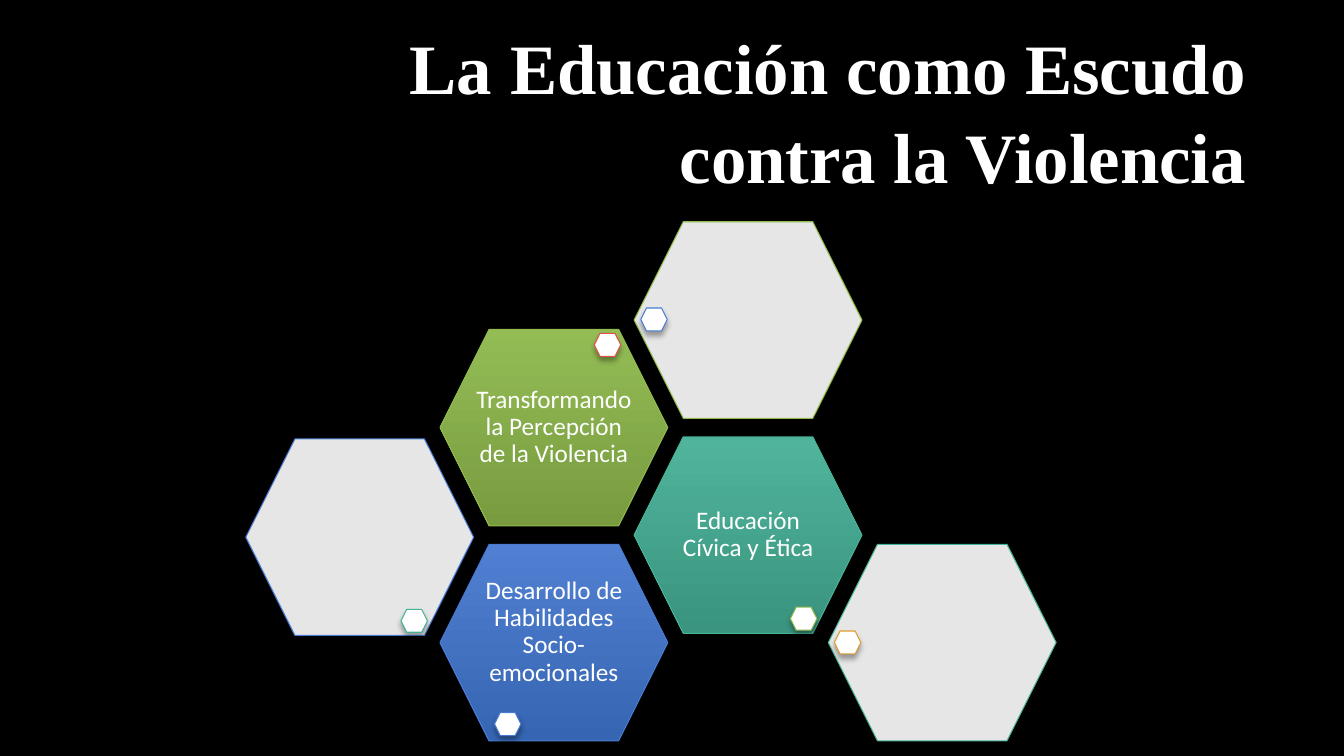
from lxml import etree
from pptx import Presentation
from pptx.dml.color import RGBColor
from pptx.enum.shapes import MSO_SHAPE
from pptx.enum.text import MSO_ANCHOR, MSO_AUTO_SIZE, PP_ALIGN
from pptx.oxml.ns import qn
from pptx.util import Pt

HEX = MSO_SHAPE.HEXAGON
TOP, MIDDLE, BOTTOM = MSO_ANCHOR.TOP, MSO_ANCHOR.MIDDLE, MSO_ANCHOR.BOTTOM
CENTER, RIGHT = PP_ALIGN.CENTER, PP_ALIGN.RIGHT
NO_FIT = MSO_AUTO_SIZE.NONE

BLACK = RGBColor(0x00, 0x00, 0x00)
WHITE = RGBColor(0xFF, 0xFF, 0xFF)
BLUE = RGBColor(0x47, 0x7B, 0xD1)
TEAL = RGBColor(0x46, 0xB2, 0x98)
GREEN = RGBColor(0x90, 0xBA, 0x4C)
RED = RGBColor(0xE2, 0x52, 0x47)
AMBER = RGBColor(0xDD, 0x9D, 0x31)
SHADES = {
    BLUE: (RGBColor(0x51, 0x80, 0xD2), RGBColor(0x36, 0x65, 0xB3)),
    TEAL: (RGBColor(0x50, 0xB4, 0x9B), RGBColor(0x3A, 0x94, 0x7F)),
    GREEN: (RGBColor(0x93, 0xBC, 0x55), RGBColor(0x78, 0x9B, 0x3F)),
}

LEFT, UPPER = 175.6, 158.4
STEP_X, STEP_Y = 138.7, 76.8
CELL = (162.7, 140.4)
DOT = (18.9, 16.4)
LABEL = (112.3, 96.5)

CELLS = [
    (1, 3, BLUE, "Desarrollo de Habilidades Socio-emocionales", TOP, (38.9, 120.2), BLUE),
    (0, 2.02, BLUE, None, None, (110.8, 121.7), TEAL),
    (2, 2, TEAL, "Educación Cívica y Ética", MIDDLE, (111.6, 121.7), GREEN),
    (3, 3, TEAL, None, None, (4.3, 61.9), AMBER),
    (1, 1, GREEN, "Transformando la Percepción de la Violencia", MIDDLE, (110.2, 2.9), RED),
    (2, 0, GREEN, None, None, (4.7, 61.6), BLUE),
]


def write(shape, text, font, size, align, anchor, pad, gap, bold=False):
    frame = shape.text_frame
    frame.word_wrap = True
    frame.auto_size = NO_FIT
    frame.vertical_anchor = anchor
    frame.margin_left = frame.margin_right = Pt(pad[0])
    frame.margin_top = frame.margin_bottom = Pt(pad[1])
    para = frame.paragraphs[0]
    para.alignment = align
    para.line_spacing = gap
    run = para.add_run()
    run.text = text
    run.font.name = font
    run.font.size = Pt(size)
    run.font.bold = bold
    run.font.color.rgb = WHITE


def shade(shape):
    shape.shadow.inherit = False
    effects = shape._element.spPr.find(qn("a:effectLst"))
    outer = etree.SubElement(
        effects, qn("a:outerShdw"), blurRad=str(Pt(4)), dist=str(Pt(3)),
        dir="5400000", algn="ctr", rotWithShape="0")
    color = etree.SubElement(outer, qn("a:srgbClr"), val=str(BLACK))
    etree.SubElement(color, qn("a:alpha"), val="35000")


def hexagon(group, x, y, size, edge, stops=None, alpha=None):
    shape = group.shapes.add_shape(HEX, Pt(x), Pt(y), Pt(size[0]), Pt(size[1]))
    fill = shape.fill
    if stops:
        fill.gradient()
        fill.gradient_angle = 270
        for stop, color in zip(fill.gradient_stops, stops):
            stop.color.rgb = color
    else:
        fill.solid()
        fill.fore_color.rgb = WHITE
    if alpha:
        color = shape._element.spPr.find(qn("a:solidFill"))[0]
        etree.SubElement(color, qn("a:alpha"), val=str(alpha * 1000))
    shape.line.color.rgb = edge
    shape.line.width = Pt(0.75)
    shade(shape)


def label(group, x, y, text, anchor):
    box = group.shapes.add_textbox(Pt(x), Pt(y), Pt(LABEL[0]), Pt(LABEL[1]))
    write(box, text, "Calibri", 18, CENTER, anchor, (0, 2), 0.9)


def comb(slide):
    group = slide.shapes.add_group_shape()
    for col, row, edge, text, anchor, dot, rim in CELLS:
        x, y = LEFT + col * STEP_X, UPPER + row * STEP_Y
        if text:
            hexagon(group, x, y, CELL, edge, stops=SHADES[edge])
            label(group, x + 25.2, y + 21.8, text, anchor)
        else:
            hexagon(group, x, y, CELL, edge, alpha=90)
        hexagon(group, x + dot[0], y + dot[1], DOT, rim)


def heading(slide):
    title = slide.shapes.title
    title.left, title.top = Pt(162), Pt(33.8)
    title.width, title.height = Pt(735.8), Pt(114.5)
    write(title, "La Educación como Escudo contra la Violencia",
          "Times New Roman", 50.6, RIGHT, BOTTOM, (7.2, 7.2), 1.04, bold=True)


def main():
    deck = Presentation()
    deck.slide_width, deck.slide_height = Pt(960), Pt(540)
    slide = deck.slides.add_slide(deck.slide_layouts[5])
    slide.background.fill.solid()
    slide.background.fill.fore_color.rgb = BLACK
    heading(slide)
    comb(slide)
    deck.save("out.pptx")


if __name__ == "__main__":
    main()
